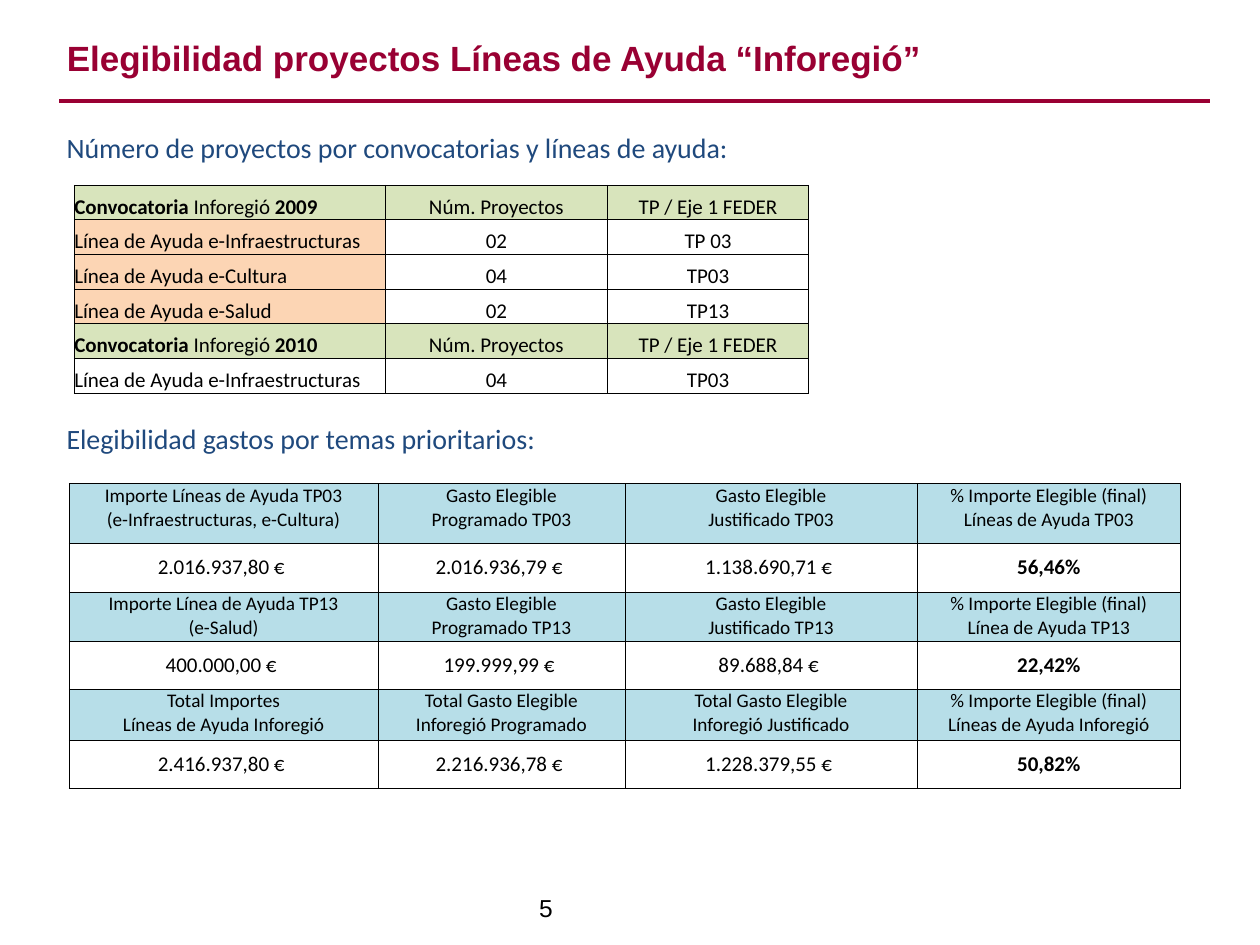
from lxml.etree import SubElement
from pptx import Presentation
from pptx.dml.color import RGBColor
from pptx.enum.shapes import MSO_CONNECTOR
from pptx.enum.text import MSO_ANCHOR, PP_ALIGN
from pptx.oxml.ns import qn
from pptx.util import Inches, Pt

BLACK = RGBColor(0x00, 0x00, 0x00)
WINE = RGBColor(0x99, 0x00, 0x33)
NAVY = RGBColor(0x1F, 0x49, 0x7D)
GREEN = RGBColor(0xD8, 0xE4, 0xBC)
PEACH = RGBColor(0xFC, 0xD5, 0xB4)
BLUE = RGBColor(0xB7, 0xDE, 0xE8)

# Content: text between asterisks is bold
TITLE = "Elegibilidad proyectos Líneas de Ayuda “Inforegió”"
HEADS = [
    (0.99, "Número de proyectos por convocatorias y líneas de ayuda:"),
    (3.3, "Elegibilidad gastos por temas prioritarios:"),
]
CALLS = [
    ("*Convocatoria *Inforegió* 2009*", "Núm. Proyectos", "TP / Eje 1 FEDER"),
    ("Línea de Ayuda e-Infraestructuras", "02", "TP 03"),
    ("Línea de Ayuda e-Cultura", "04", "TP03"),
    ("Línea de Ayuda e-Salud", "02", "TP13"),
    ("*Convocatoria *Inforegió* 2010*", "Núm. Proyectos", "TP / Eje 1 FEDER"),
    ("Línea de Ayuda e-Infraestructuras", "04", "TP03"),
]
COSTS = [
    ("Importe Líneas de Ayuda TP03\n(e-Infraestructuras, e-Cultura)",
     "Gasto Elegible\nProgramado TP03", "Gasto Elegible\nJustificado TP03",
     "% Importe Elegible (final)\nLíneas de Ayuda TP03"),
    ("2.016.937,80 € ", "2.016.936,79 € ", "1.138.690,71 € ", "*56,46%*"),
    ("Importe Línea de Ayuda TP13\n(e-Salud)",
     "Gasto Elegible\nProgramado TP13", "Gasto Elegible\nJustificado TP13",
     "% Importe Elegible (final)\nLínea de Ayuda TP13"),
    ("400.000,00 € ", "199.999,99 € ", "89.688,84 € ", "*22,42%*"),
    ("Total Importes\nLíneas de Ayuda Inforegió",
     "Total Gasto Elegible\nInforegió Programado",
     "Total Gasto Elegible\nInforegió Justificado",
     "% Importe Elegible (final)\nLíneas de Ayuda Inforegió"),
    ("2.416.937,80 € ", "2.216.936,78 € ", "1.228.379,55 € ", "*50,82%*"),
]


def write(frame, text, size=12, font="Calibri", color=BLACK, bold=False,
          align=PP_ALIGN.LEFT):
    para = frame.paragraphs[0]
    para.alignment = align
    for i, part in enumerate(text.split("*")):
        for j, line in enumerate(part.split("\n")):
            if j:
                para.add_line_break()
            if line:
                run = para.add_run()
                run.text = line
                run.font.size, run.font.name = Pt(size), font
                run.font.bold = bold or i % 2 == 1
                run.font.color.rgb = color
    # Line breaks take the size of their text
    for gap in para._p.findall(qn("a:br")):
        SubElement(gap, qn("a:rPr"), sz=str(size * 100))


def border(cell):
    props = cell._tc.get_or_add_tcPr()
    for side in ("lnL", "lnR", "lnT", "lnB"):
        line = SubElement(props, qn("a:" + side), w=str(Pt(0.5)))
        fill = SubElement(line, qn("a:solidFill"))
        SubElement(fill, qn("a:srgbClr"), val=str(BLACK))


def grid(slide, data, left, top, cols, rows, style):
    """Draw a table; style(row, col) gives fill, size, anchor and alignment."""
    table = slide.shapes.add_table(
        len(rows), len(cols), Inches(left), Inches(top),
        Inches(sum(cols)), Inches(sum(rows))).table
    table.first_row = table.horz_banding = False
    for col, width in zip(table.columns, cols):
        col.width = Inches(width)
    for r, height in enumerate(rows):
        table.rows[r].height = Inches(height)
        for c, text in enumerate(data[r]):
            cell = table.cell(r, c)
            fill, size, anchor, align = style(r, c)
            cell.margin_left = cell.margin_right = 0
            cell.margin_top = cell.margin_bottom = 0
            cell.vertical_anchor = anchor
            border(cell)
            if fill:
                cell.fill.solid()
                cell.fill.fore_color.rgb = fill
            else:
                cell.fill.background()
            write(cell.text_frame, text, size=size, align=align)


def call_style(r, c):
    fill = GREEN if r in (0, 4) else PEACH if c == 0 and r < 4 else None
    align = PP_ALIGN.CENTER if c else PP_ALIGN.LEFT
    return fill, 12, MSO_ANCHOR.BOTTOM, align


def cost_style(r, c):
    if r % 2:
        return None, 12, MSO_ANCHOR.MIDDLE, PP_ALIGN.CENTER
    return BLUE, 11, MSO_ANCHOR.TOP, PP_ALIGN.CENTER


def main():
    deck = Presentation()
    deck.slide_width, deck.slide_height = Inches(10), Inches(7.5)
    slide = deck.slides.add_slide(deck.slide_layouts[5])

    # Title and rule
    title = slide.shapes.title
    title.left, title.top = Inches(0.43), Inches(0.24)
    title.width, title.height = Inches(7.04), Inches(0.44)
    title.text_frame.word_wrap = False
    title.text_frame.vertical_anchor = MSO_ANCHOR.TOP
    write(title.text_frame, TITLE, size=20, font="Arial", color=WINE, bold=True)
    rule = slide.shapes.add_connector(
        MSO_CONNECTOR.STRAIGHT, Inches(0.47), Inches(0.8), Inches(9.6), Inches(0.8))
    rule.line.color.rgb, rule.line.width = WINE, Pt(2.25)
    SubElement(rule._element.spPr, qn("a:effectLst"))

    # Section headings
    for top, text in HEADS:
        box = slide.shapes.add_textbox(
            Inches(0.43), Inches(top), Inches(9.06), Inches(0.37))
        box.text_frame.word_wrap = True
        write(box.text_frame, text, size=16, color=NAVY, align=PP_ALIGN.JUSTIFY)

    # Tables
    grid(slide, CALLS, 0.59, 1.47, [2.47, 1.76, 1.6], [1.65 / 6] * 6, call_style)
    grid(slide, COSTS, 0.55, 3.84, [2.45, 1.96, 2.32, 2.09],
         [0.47, 0.39, 0.39, 0.38, 0.41, 0.38], cost_style)

    # Page number
    page = slide.shapes.add_textbox(
        Inches(4.18), Inches(6.85), Inches(2.33), Inches(0.52))
    page.text_frame.word_wrap = True
    page.text_frame.vertical_anchor = MSO_ANCHOR.BOTTOM
    write(page.text_frame, "5", size=14, font="Arial")

    deck.save("out.pptx")


if __name__ == "__main__":
    main()
